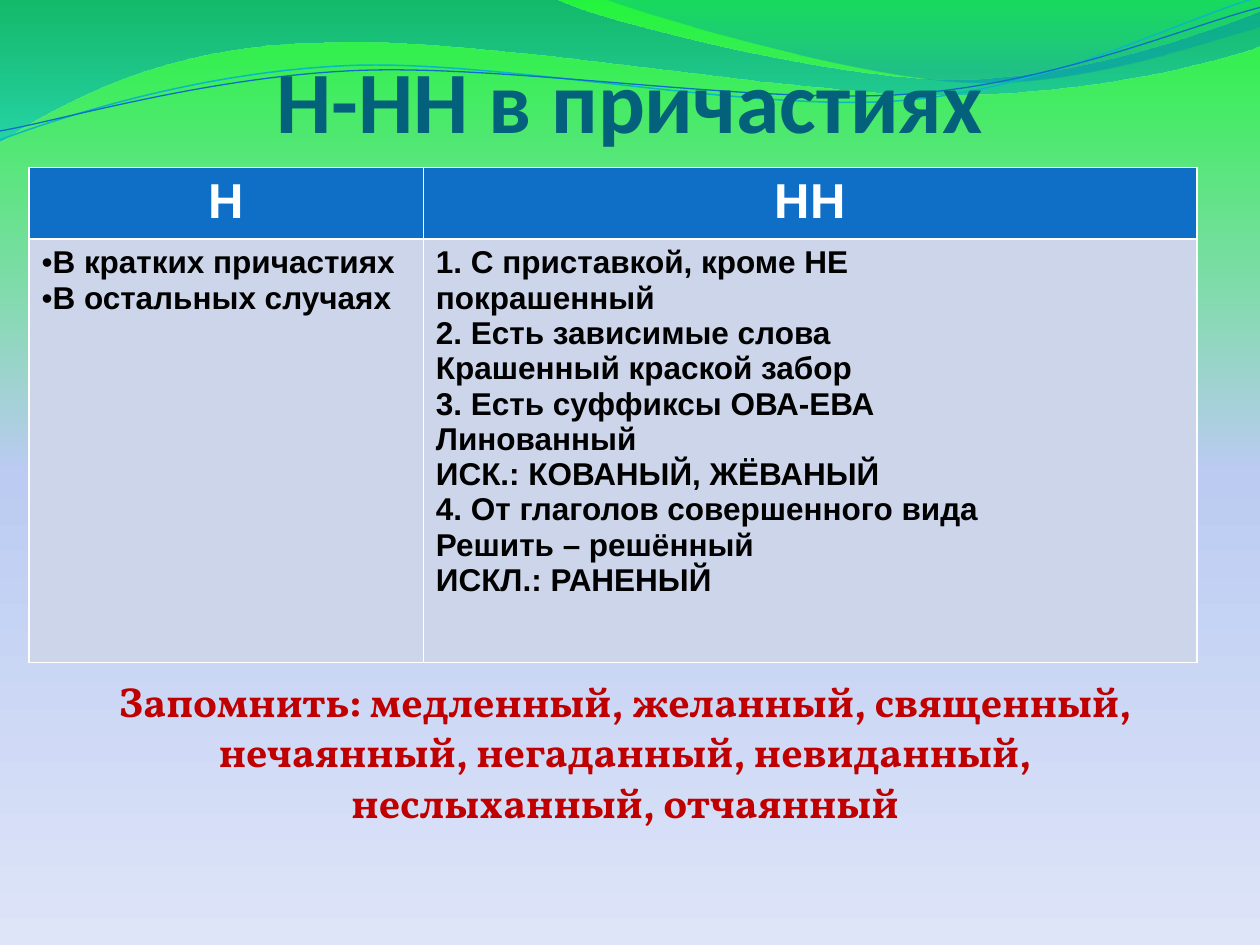
import math

from lxml import etree
from pptx import Presentation, util as u
from pptx.dml.color import RGBColor
from pptx.enum import text
from pptx.oxml.ns import qn

THEME = {
    "title": {"font": "Calibri", "size": 50, "color": "04617B"},
    "header": {"font": "Arial", "size": 28, "color": "FFFFFF", "fill": "0F6FC6"},
    "rule": {"font": "Arial", "size": 18, "color": "000000", "fill": "CCD5EA"},
    "remember": {"font": "Vollkorn", "size": 24, "color": "C00000"},
    # Gradient stops: position, colour, opacity (all in percent)
    "sky": [(0, "24F43D", 100), (50, "BBCBF2", 100), (100, "DEE5F8", 100)],
    "wide_wave": [(0, "0074A1", 45), (100, "00C6CF", 55)],
    "corner_wave": [(0, "00A1A9", 30), (80, "008BBF", 45)],
    "upper_line": "0AB8BF",
    "lower_line": "0F6FC6",
}
COLUMNS = 10
LINE_TILT = -2.7

deck = Presentation()
deck.slide_width, deck.slide_height = u.Inches(10), u.Inches(7.5)
CELL = deck.slide_width / COLUMNS
slide = deck.slides.add_slide(deck.slide_layouts[6])


def grid(*cells):
    return [u.Emu(round(cell * CELL)) for cell in cells]


def style(paragraph, look, align=text.PP_ALIGN.LEFT):
    paragraph.alignment = align
    font = paragraph.font
    font.name, font.size, font.bold = look["font"], u.Pt(look["size"]), True
    font.color.rgb = RGBColor.from_string(look["color"])


# Background and waves; each segment is a line end (2 numbers) or a Bézier (6)
waves = [
    ((0, -0.01), [
        (4.4, -0.01),
        (4.76, 0.17, 6.64, 0.63, 7.58, 0.63),
        (8.53, 0.63, 9.58, 0.26, 10, 0.09),
        (10.01, 0.36),
        (9.83, 0.44, 8.7, 0.76, 7.46, 0.75),
        (6.22, 0.75, 3.82, 0.28, 2.57, 0.34),
        (1.29, 0.35, 0.46, 0.83, -0.01, 1.13),
    ], "wide_wave", None, None),
    ((4.79, -0.01), [
        (5.09, 0.11, 6.82, 0.62, 7.69, 0.65),
        (8.56, 0.69, 9.61, 0.32, 10, 0.21),
        (10, 0),
    ], "corner_wave", None, None),
    ((0, 1.11), [
        (0.48, 0.93, 1.58, 0.57, 2.77, 0.52),
        (3.95, 0.47, 5.93, 0.89, 7.13, 0.8),
        (8.33, 0.71, 9.38, 0.15, 9.98, -0.02),
    ], "upper_line", 0.85, (4.99, 0.58)),
    ((0, 1.04), [
        (0.47, 0.96, 1.64, 0.61, 2.83, 0.56),
        (4.03, 0.51, 5.97, 0.83, 7.17, 0.75),
        (8.36, 0.67, 9.41, 0.21, 10, 0.06),
    ], "lower_line", 0.75, (5, 0.59)),
]
cos, sin = math.cos(math.radians(-LINE_TILT)), math.sin(math.radians(-LINE_TILT))
gradients = [(slide.background.fill, slide.element, THEME["sky"])]
for start, segments, look, line_width, pivot in waves:
    outline = [start]
    for segment in segments:
        outline += zip(segment[::2], segment[1::2])
    if pivot:
        px, py = pivot
        outline = [(px + (x - px) * cos - (y - py) * sin,
                    py + (x - px) * sin + (y - py) * cos) for x, y in outline]
    points = [grid(*point) for point in outline]
    builder = slide.shapes.build_freeform(*points[0], scale=1.0)
    builder.add_line_segments(points[1:], close=pivot is None)
    wave = builder.convert_to_shape()
    wave.shadow.inherit = False

    # Join each three points of a Bézier segment into one curve
    steps = iter(wave.element.findall(".//" + qn("a:lnTo")))
    for segment in segments:
        first = next(steps)
        if len(segment) == 6:
            first.addprevious(curve := etree.Element(qn("a:cubicBezTo")))
            for step in (first, next(steps), next(steps)):
                curve.append(step[0])
                step.getparent().remove(step)

    if pivot is None:
        wave.line.fill.background()
        gradients.append((wave.fill, wave.element, THEME[look]))
    else:
        wave.rotation = LINE_TILT
        wave.fill.background()
        wave.line.color.rgb = RGBColor.from_string(THEME[look])
        wave.line.width = u.Pt(line_width)

for fill, owner, stops in gradients:
    fill.gradient()
    fill.gradient_angle = 270
    stop_list = owner.find(".//" + qn("a:gsLst"))
    for old_stop in list(stop_list):
        stop_list.remove(old_stop)
    for position, color, opacity in stops:
        stop = etree.SubElement(stop_list, qn("a:gs"), pos=str(position * 1000))
        rgb = etree.SubElement(stop, qn("a:srgbClr"), val=color)
        if opacity < 100:
            etree.SubElement(rgb, qn("a:alpha"), val=str(opacity * 1000))

# Title and words to remember: wording, place, look, side and bottom margins
captions = [
    ("Н-НН в причастиях", (0.5, 0.31, 9, 1.02), "title", 0, 0.13,
     text.MSO_ANCHOR.MIDDLE),
    ("Запомнить: медленный, желанный, священный, нечаянный, негаданный, "
     "невиданный, неслыханный, отчаянный",
     (0.47, 5.31, 8.98, 1.31), "remember", 0.1, 0.05, text.MSO_ANCHOR.TOP),
]
for wording, place, look, side, bottom, anchor in captions:
    frame = slide.shapes.add_textbox(*grid(*place)).text_frame
    frame.word_wrap = True
    frame.vertical_anchor = anchor
    frame.margin_left, frame.margin_right, frame.margin_bottom = grid(side, side, bottom)
    frame.text = wording
    style(frame.paragraphs[0], THEME[look], text.PP_ALIGN.CENTER)

# Table of spelling rules; its default style draws the white borders
column_widths, row_heights = (3.13, 6.14), (0.54, 3.36)
rules = [
    [["Н"], ["НН"]],
    [
        ["В кратких причастиях", "В остальных случаях"],
        [
            "1. С приставкой, кроме НЕ",
            "покрашенный",
            "2. Есть зависимые слова",
            "Крашенный краской забор",
            "3. Есть суффиксы ОВА-ЕВА",
            "Линованный",
            "ИСК.: КОВАНЫЙ, ЖЁВАНЫЙ",
            "4. От глаголов совершенного вида",
            "Решить – решённый",
            "ИСКЛ.: РАНЕНЫЙ",
        ],
    ],
]
table = slide.shapes.add_table(
    2, 2, *grid(0.23, 1.33, sum(column_widths), sum(row_heights))).table
for column, width in zip(table.columns, grid(*column_widths)):
    column.width = width
for row, height in zip(table.rows, grid(*row_heights)):
    row.height = height

for r, row in enumerate(rules):
    look = THEME["rule" if r else "header"]
    for c, lines in enumerate(row):
        cell = table.cell(r, c)
        cell.fill.solid()
        cell.fill.fore_color.rgb = RGBColor.from_string(look["fill"])
        cell.text = "\n".join(lines)
        for paragraph in cell.text_frame.paragraphs:
            style(paragraph, look, text.PP_ALIGN.LEFT if r else text.PP_ALIGN.CENTER)
            if r == 0:
                continue
            layout = paragraph._p.get_or_add_pPr()
            hang = int(grid(0.38 if c else 0)[0])
            layout.set("marL", str(hang))
            layout.set("indent", str(-hang))
            if c == 0:
                layout.insert(0, etree.Element(qn("a:buFont"), typeface="Arial"))
                layout.insert(1, etree.Element(qn("a:buChar"), char="•"))

deck.save("out.pptx")
